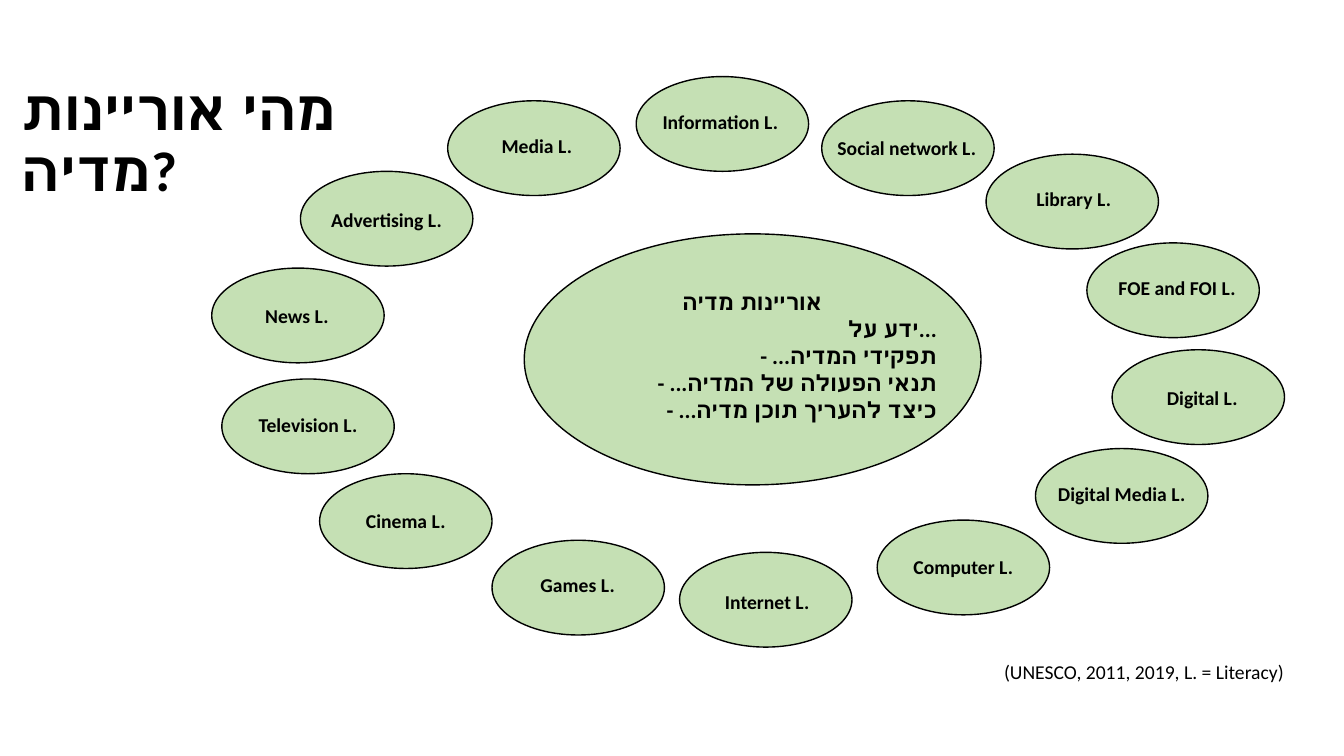
import pptx
import pptx.dml.color
import pptx.enum.shapes
import pptx.enum.text
import pptx.util

Inches = pptx.util.Inches
Align = pptx.enum.text.PP_ALIGN
Anchor = pptx.enum.text.MSO_ANCHOR
BLACK = pptx.dml.color.RGBColor(0x00, 0x00, 0x00)
GREEN = pptx.dml.color.RGBColor(0xC5, 0xE0, 0xB4)

TITLE = "מהי אוריינות מדיה?"
SOURCE = "(UNESCO, 2011, 2019, L. = Literacy)"
CORE_HEADING = "אוריינות מדיה"
CORE_POINTS = [
    "ידע על...",
    "- ...תפקידי המדיה",
    "- ...תנאי הפעולה של המדיה",
    "- ...כיצד להעריך תוכן מדיה",
]
# label, bubble left and top, label left, top and width
LITERACIES = [
    ("Information L.", 6.31, 0.76, 6.19, 1.04, 1.91),
    ("Social network L.", 8.15, 1.00, 8.04, 1.29, 1.91),
    ("Library L.", 9.78, 1.53, 10.18, 1.80, 0.94),
    ("FOE and FOI L.", 10.78, 2.41, 10.99, 2.68, 1.37),
    ("Digital L.", 11.03, 3.47, 11.47, 3.78, 0.91),
    ("Digital Media L.", 10.27, 4.45, 10.39, 4.73, 1.47),
    ("Computer L.", 8.70, 5.16, 8.96, 5.45, 1.19),
    ("Internet L.", 6.74, 5.48, 7.09, 5.80, 1.04),
    ("Games L.", 4.88, 5.36, 5.26, 5.63, 0.94),
    ("Cinema L.", 3.17, 4.70, 3.53, 5.00, 0.99),
    ("Television L.", 2.20, 3.76, 2.46, 4.04, 1.19),
    ("News L.", 2.10, 2.66, 2.14, 2.96, 1.61),
    ("Advertising L.", 2.98, 1.70, 2.88, 2.01, 1.91),
    ("Media L.", 4.44, 1.00, 4.37, 1.28, 1.91),
]
BUBBLE_WIDTH, BUBBLE_HEIGHT = 1.71, 0.94
LABEL_HEIGHT = 0.34


def add_bubble(page, left, top, width, height):
    bubble = page.shapes.add_shape(
        pptx.enum.shapes.MSO_SHAPE.OVAL,
        Inches(left), Inches(top), Inches(width), Inches(height))
    bubble.shadow.inherit = False
    bubble.fill.solid()
    bubble.fill.fore_color.rgb = GREEN
    bubble.line.color.rgb = BLACK
    bubble.line.width = pptx.util.Pt(1)


def add_text(page, area, lines, size, bold=True, wrap=True, anchor=Anchor.TOP):
    box = page.shapes.add_textbox(*[Inches(length) for length in area])
    frame = box.text_frame
    frame.word_wrap = wrap
    frame.vertical_anchor = anchor
    for number, (text, alignment) in enumerate(lines):
        para = frame.add_paragraph() if number else frame.paragraphs[0]
        para.text = text
        para.alignment = alignment
        para.font.name = "Calibri"
        para.font.size = pptx.util.Pt(size)
        para.font.bold = bold
        para.font.color.rgb = BLACK
    return frame


def main():
    deck = pptx.Presentation()
    deck.slide_width = Inches(13.33)
    deck.slide_height = Inches(7.5)
    page = deck.slides.add_slide(deck.slide_layouts[6])

    for label, left, top, label_left, label_top, label_width in LITERACIES:
        add_bubble(page, left, top, BUBBLE_WIDTH, BUBBLE_HEIGHT)
        add_text(page, (label_left, label_top, label_width, LABEL_HEIGHT),
                 [(label, Align.CENTER)], 14, wrap=False, anchor=Anchor.MIDDLE)

    add_bubble(page, 5.2, 2.32, 4.53, 2.49)
    core = [(CORE_HEADING, Align.CENTER)]
    core += [(point, Align.RIGHT) for point in CORE_POINTS]
    add_text(page, (5.53, 2.81, 3.86, 1.72), core, 16)

    add_text(page, (9.86, 6.5, 3.2, 0.4), [(SOURCE, Align.LEFT)], 14, bold=False)
    title = add_text(page, (0.12, 0.76, 3.56, 1.31), [(TITLE, Align.LEFT)], 40,
                     anchor=Anchor.MIDDLE)
    title.paragraphs[0].line_spacing = 0.9

    deck.save("out.pptx")


if __name__ == "__main__":
    main()
